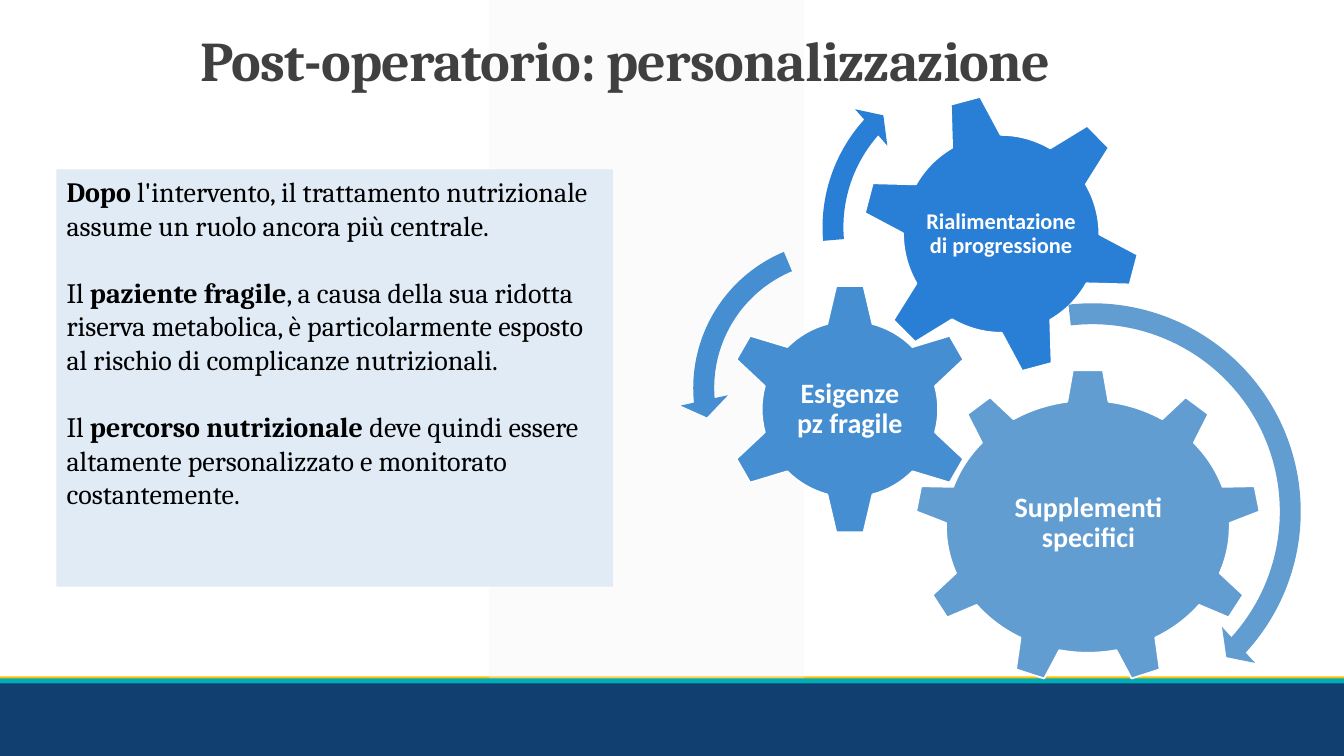
"""Build the slide on personalised post-operative nutrition."""
from lxml import etree
from pptx import Presentation
from pptx.dml.color import RGBColor
from pptx.enum import shapes, text
from pptx.oxml.ns import qn
from pptx.util import Inches, Pt

COLORS = {
    "gold": "FFC000", "teal": "00ACB6", "navy": "113F6F", "band": "F2F2F2",
    "title": "404040", "panel": "E0EBF6", "black": "000000", "white": "FFFFFF",
    "light": "629DD1", "medium": "468ED2", "strong": "297FD5",
}
KIND = shapes.MSO_SHAPE
TITLE = "Post-operatorio: personalizzazione"
TITLE_BOX = (1.89, 0.29, 10.19, 0.67)
BODY_BOX = (0.56, 1.68, 5.52, 4.14)
BODY = [
    [("Dopo ", True),
     ("l'intervento, il trattamento nutrizionale assume un ruolo ancora più centrale.", False)],
    [("Il ", False), ("paziente fragile", True),
     (", a causa della sua ridotta riserva metabolica, è particolarmente esposto "
      "al rischio di complicanze nutrizionali.", False)],
    [("Il ", False), ("percorso nutrizionale ", True),
     ("deve quindi essere altamente personalizzato e monitorato costantemente.", False)],
]
BACKDROP = [
    ("gold", (0, 6.71, 13.33, 0.05)),
    ("navy", (0, 6.75, 13.33, 0.75)),
    ("band", (4.85, -0.14, 3.12, 6.89)),
    ("teal", (0, 6.73, 13.33, 0.05)),
]
GEARS = [
    ("Supplementi specifici", 20, "light", KIND.GEAR_9, 0,
     (9.07, 3.66, 3.44, 3.13), (9.74, 4.39, 2.11, 1.61)),
    ("Esigenze pz fragile", 20, "medium", KIND.GEAR_6, 0,
     (7.18, 2.81, 2.5, 2.5), (7.81, 3.44, 1.24, 1.24)),
    ("Rialimentazione di progressione", 16, "strong", KIND.GEAR_6, 345,
     (8.54, 0.92, 2.78, 2.8), (9.15, 1.54, 1.56, 1.57)),
]
TURNS = [
    ("light", KIND.CIRCULAR_ARROW, (8.63, 2.87, 4.41, 4.41),
     (0.047, 2.99, 25.437, 158.033, 0.055)),
    ("medium", KIND.LEFT_CIRCULAR_ARROW, (6.74, 2.25, 3.2, 3.2),
     (0.065, 4.3, 104.891, 148.378, 0.075)),
    ("strong", KIND.CIRCULAR_ARROW, (8.02, 0.53, 3.45, 3.45),
     (0.06, 3.941, 133.138, 105.082, 0.07)),
]


def rgb(name):
    return RGBColor.from_string(COLORS[name])


def lengths(box):
    return [Inches(value) for value in box]


def place(holder, box):
    holder.left, holder.top, holder.width, holder.height = lengths(box)


def style(font, face, size, color, bold):
    font.name, font.size, font.bold = face, Pt(size), bold
    font.color.rgb = rgb(color)


def add_filled(slide, kind, box, color):
    part = slide.shapes.add_shape(kind, *lengths(box))
    part.shadow.inherit = False
    part.fill.solid()
    part.fill.fore_color.rgb = rgb(color)
    part.line.fill.background()
    return part


def add_backdrop(slide):
    for color, box in BACKDROP:
        strip = add_filled(slide, KIND.RECTANGLE, box, color)
        if color == "band":
            tint = strip._element.spPr.find(".//" + qn("a:srgbClr"))
            etree.SubElement(tint, qn("a:alpha"), val="30000")


def fill_title(title):
    place(title, TITLE_BOX)
    frame = title.text_frame
    frame.text = TITLE
    frame.auto_size = text.MSO_AUTO_SIZE.NONE
    frame.vertical_anchor = text.MSO_ANCHOR.MIDDLE
    heading = frame.paragraphs[0]
    heading.alignment = text.PP_ALIGN.LEFT
    heading.line_spacing = 0.9
    style(heading.runs[0].font, "Cambria", 40, "title", True)
    heading.runs[0]._r.get_or_add_rPr().set("spc", "-50")


def fill_body(body):
    place(body, BODY_BOX)
    body.fill.solid()
    body.fill.fore_color.rgb = rgb("panel")
    frame = body.text_frame
    frame.auto_size = text.MSO_AUTO_SIZE.NONE
    frame.vertical_anchor = text.MSO_ANCHOR.TOP
    for index, pieces in enumerate(BODY):
        paragraph = frame.add_paragraph() if index else frame.paragraphs[0]
        paragraph.space_before = Pt(24 if index else 0)
        properties = paragraph._p.get_or_add_pPr()
        properties.set("marL", "0")
        properties.set("indent", "0")
        etree.SubElement(properties, qn("a:buNone"))
        for words, bold in pieces:
            run = paragraph.add_run()
            run.text = words
            style(run.font, "Cambria", 20, "black", bold)


def add_gear(slide, label, size, color, kind, rotation, box, label_box):
    gear = add_filled(slide, kind, box, color)
    gear.rotation = rotation
    gear.line.color.rgb = rgb("white")
    gear.line.width = Pt(1.25)
    frame = slide.shapes.add_textbox(*lengths(label_box)).text_frame
    frame.word_wrap = True
    frame.vertical_anchor = text.MSO_ANCHOR.MIDDLE
    frame.margin_left = frame.margin_right = Inches(0.02)
    frame.margin_top = frame.margin_bottom = Inches(0.02)
    frame.text = label
    caption = frame.paragraphs[0]
    caption.alignment = text.PP_ALIGN.CENTER
    caption.line_spacing = 0.9
    style(caption.runs[0].font, "Calibri", size, "white", True)


def add_turn(slide, color, kind, box, adjustments):
    turn = add_filled(slide, kind, box, color)
    for index, value in enumerate(adjustments):
        turn.adjustments[index] = value


def main():
    deck = Presentation()
    deck.slide_width, deck.slide_height = Inches(13.33), Inches(7.5)
    slide = deck.slides.add_slide(deck.slide_layouts[1])
    title, body = slide.placeholders
    add_backdrop(slide)
    fill_title(title)
    fill_body(body)
    for holder in (title, body):
        slide.shapes._spTree.append(holder._element)
    for gear in GEARS:
        add_gear(slide, *gear)
    for turn in TURNS:
        add_turn(slide, *turn)
    deck.save("out.pptx")


if __name__ == "__main__":
    main()
